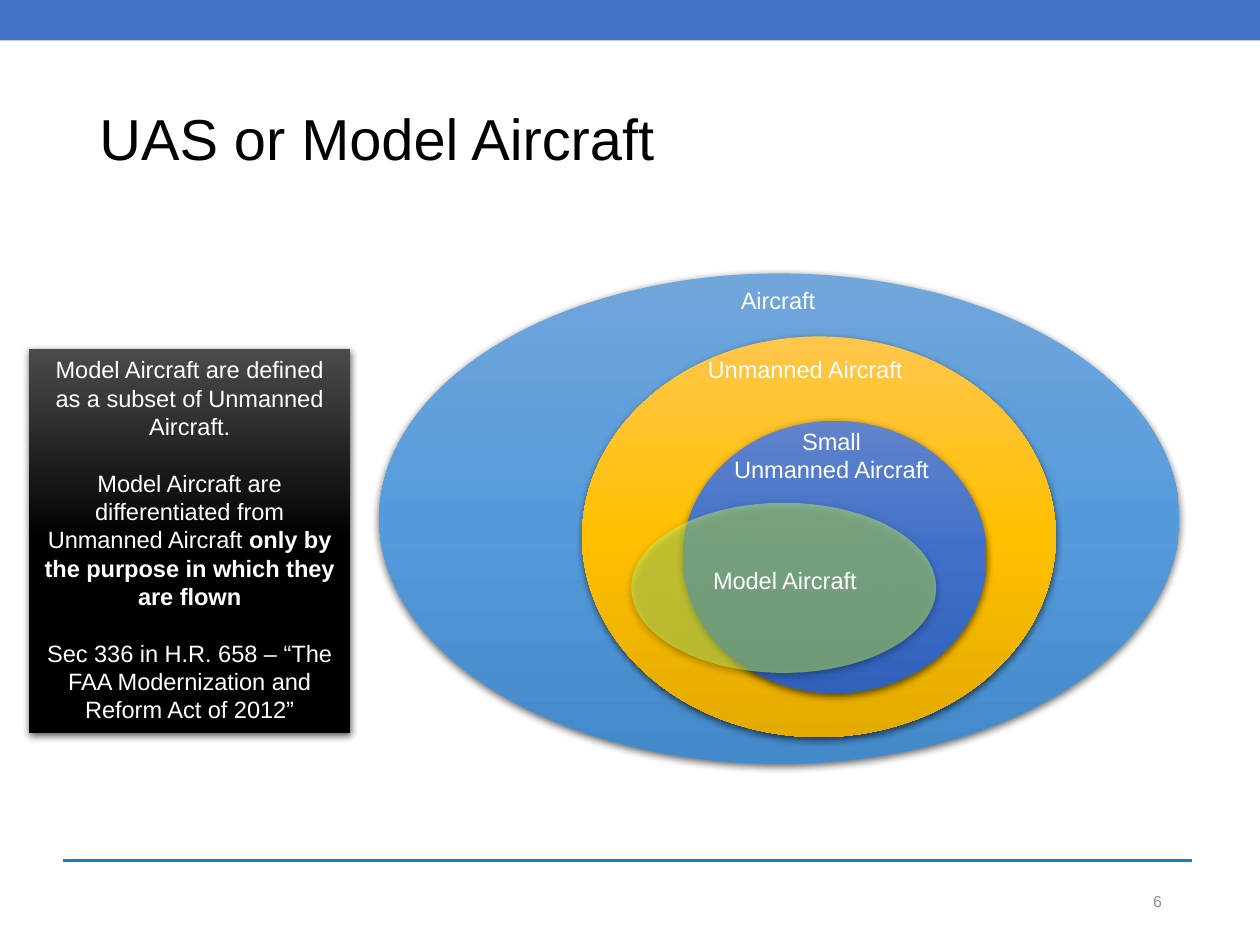
import copy

import pptx
import pptx.dml.color
import pptx.enum.shapes
import pptx.enum.text
import pptx.oxml
import pptx.oxml.ns
import pptx.util
from pptx.dml.color import RGBColor
from pptx.util import Inches

WHITE = RGBColor(0xFF, 0xFF, 0xFF)
BLACK = RGBColor(0x00, 0x00, 0x00)
GRAY = RGBColor(0x8C, 0x8C, 0x8C)
BANNER_BLUE = RGBColor(0x44, 0x72, 0xC4)
RULE_BLUE = RGBColor(0x0F, 0x7F, 0xC5)
LIME = RGBColor(0xCC, 0xFF, 0x66)
SKY = (RGBColor(0x71, 0xA6, 0xDB), RGBColor(0x55, 0x9B, 0xDB), RGBColor(0x44, 0x8A, 0xCA))
GOLD = (RGBColor(0xFF, 0xC6, 0x4B), RGBColor(0xFF, 0xC0, 0x00), RGBColor(0xE3, 0xAB, 0x00))
ROYAL = (RGBColor(0x61, 0x83, 0xCB), RGBColor(0x3E, 0x70, 0xCA), RGBColor(0x30, 0x62, 0xBB))
COAL = (RGBColor(0x4B, 0x4B, 0x4B), BLACK, BLACK)

OVAL = pptx.enum.shapes.MSO_SHAPE.OVAL
RECTANGLE = pptx.enum.shapes.MSO_SHAPE.RECTANGLE
ALIGN = pptx.enum.text.PP_ALIGN
ANCHOR = pptx.enum.text.MSO_ANCHOR
BODY_SIZE = 13.5
SHADOW = (
    f'<a:outerShdw {pptx.oxml.ns.nsdecls("a")} blurRad="57150" dist="19050" dir="5400000" '
    'algn="ctr" rotWithShape="0"><a:srgbClr val="000000"><a:alpha val="63000"/></a:srgbClr>'
    "</a:outerShdw>"
)


def style_paragraph(paragraph, size, color, align):
    """Set the font and alignment of one paragraph."""
    paragraph.alignment = align
    paragraph.font.name = "Arial"
    paragraph.font.size = pptx.util.Pt(size)
    paragraph.font.color.rgb = color


def add_text(slide, box, lines, size=BODY_SIZE, color=WHITE, align=ALIGN.CENTER, anchor=ANCHOR.TOP):
    """Add a text box with one paragraph for each line."""
    frame = slide.shapes.add_textbox(*map(Inches, box)).text_frame
    frame.word_wrap = True
    frame.vertical_anchor = anchor
    frame.text = "\n".join(lines)
    for paragraph in frame.paragraphs:
        style_paragraph(paragraph, size, color, align)
    return frame


def add_plain_shape(slide, kind, box):
    """Add a preset shape without outline or shadow."""
    shape = slide.shapes.add_shape(kind, *map(Inches, box))
    shape.line.fill.background()
    shape.shadow.inherit = False
    return shape


def add_raised_shape(slide, kind, box):
    """Add a preset shape with a soft shadow below it."""
    shape = add_plain_shape(slide, kind, box)
    effects = shape._element.spPr.find(pptx.oxml.ns.qn("a:effectLst"))
    effects.append(pptx.oxml.parse_xml(SHADOW))
    return shape


def fill_gradient(shape, colors):
    """Fill a shape from top to bottom with three evenly spaced colours."""
    shape.fill.gradient()
    shape.fill.gradient_angle = 270
    stop_list = next(shape._element.spPr.iter(pptx.oxml.ns.qn("a:gsLst")))
    stop_list.insert(1, copy.deepcopy(stop_list[0]))
    for index, (stop, color) in enumerate(zip(shape.fill.gradient_stops, colors)):
        stop.position = index / 2
        stop.color.rgb = color


def add_frame(slide, box):
    """Draw the top banner, bottom rule and page number."""
    left, top, width, height = box
    banner = add_plain_shape(slide, RECTANGLE, (left, top, width, 0.32))
    banner.fill.solid()
    banner.fill.fore_color.rgb = BANNER_BLUE
    rule_top = Inches(top + height - 0.67)
    rule = slide.shapes.add_connector(
        pptx.enum.shapes.MSO_CONNECTOR.STRAIGHT,
        Inches(left + 0.5), rule_top, Inches(left + width - 0.54), rule_top)
    rule.line.color.rgb = RULE_BLUE
    rule.line.width = pptx.util.Pt(1.5)
    rule._element.spPr.append(
        pptx.oxml.parse_xml(f'<a:effectLst {pptx.oxml.ns.nsdecls("a")}/>'))
    add_text(slide, (left + width - 1.14, top + height - 0.55, 0.46, 0.4), ["6"],
             9, GRAY, ALIGN.RIGHT, ANCHOR.MIDDLE)


def add_title(slide, box):
    """Write the slide title."""
    title = add_text(slide, box, ["UAS or Model Aircraft"], 33, BLACK, ALIGN.LEFT, ANCHOR.MIDDLE)
    title.paragraphs[0].line_spacing = 0.9


def add_aircraft_sets(slide, box):
    """Draw the nested aircraft classes and the overlapping model class."""
    left, top, width, height = box
    classes = [
        ((0, 0, width, height), SKY, (2.38, 0.05, 1.57, 0.33), ["Aircraft"]),
        ((1.61, 0.5, 3.76, 3.18), GOLD, (2.38, 0.6, 2, 0.33), ["Unmanned Aircraft"]),
        ((2.41, 1.17, 2.41, 2.16), ROYAL, (2.59, 1.17, 2, 0.56), ["Small", "Unmanned Aircraft"]),
        ((2, 1.82, 2.42, 1.35), None, (2.22, 2.27, 2, 0.33), ["Model Aircraft"]),
    ]
    for (x, y, *oval_size), colors, (label_x, label_y, *label_size), lines in classes:
        oval = add_raised_shape(slide, OVAL, (left + x, top + y, *oval_size))
        if colors:
            fill_gradient(oval, colors)
        else:
            oval.fill.solid()
            oval.fill.fore_color.rgb = LIME
            lime = next(oval._element.spPr.iter(pptx.oxml.ns.qn("a:solidFill")))[0]
            lime.append(pptx.oxml.parse_xml(
                f'<a:alpha {pptx.oxml.ns.nsdecls("a")} val="46000"/>'))
        add_text(slide, (left + label_x, top + label_y, *label_size), lines)


def add_definition(slide, box):
    """Add the panel that defines model aircraft."""
    statements = [
        [("Model Aircraft are defined as a subset of Unmanned Aircraft.", False)],
        [("Model Aircraft are differentiated from Unmanned Aircraft ", False),
         ("only by the purpose in which they are flown", True)],
        [("Sec 336 in H.R. 658 – “The FAA Modernization and Reform Act of 2012”", False)],
    ]
    panel = add_raised_shape(slide, RECTANGLE, box)
    fill_gradient(panel, COAL)
    frame = panel.text_frame
    frame.word_wrap = True
    frame.vertical_anchor = ANCHOR.TOP
    for index, statement in enumerate(statements):
        paragraph = frame.add_paragraph() if index else frame.paragraphs[0]
        style_paragraph(paragraph, BODY_SIZE, WHITE, ALIGN.CENTER)
        if index:
            paragraph.space_before = pptx.util.Pt(16.2)
        for text, bold in statement:
            run = paragraph.add_run()
            run.text = text
            if bold:
                run.font.bold = True


def main():
    """Build and save the slide."""
    deck = pptx.Presentation()
    deck.slide_width, deck.slide_height = Inches(10), Inches(7.5)
    slide = deck.slides.add_slide(deck.slide_layouts[6])
    add_frame(slide, (0, 0, 10, 7.5))
    add_title(slide, (0.69, 0.4, 8.62, 1.45))
    add_aircraft_sets(slide, (3.01, 2.17, 6.35, 3.89))
    add_definition(slide, (0.23, 2.77, 2.55, 3.05))
    deck.save("out.pptx")


if __name__ == "__main__":
    main()
